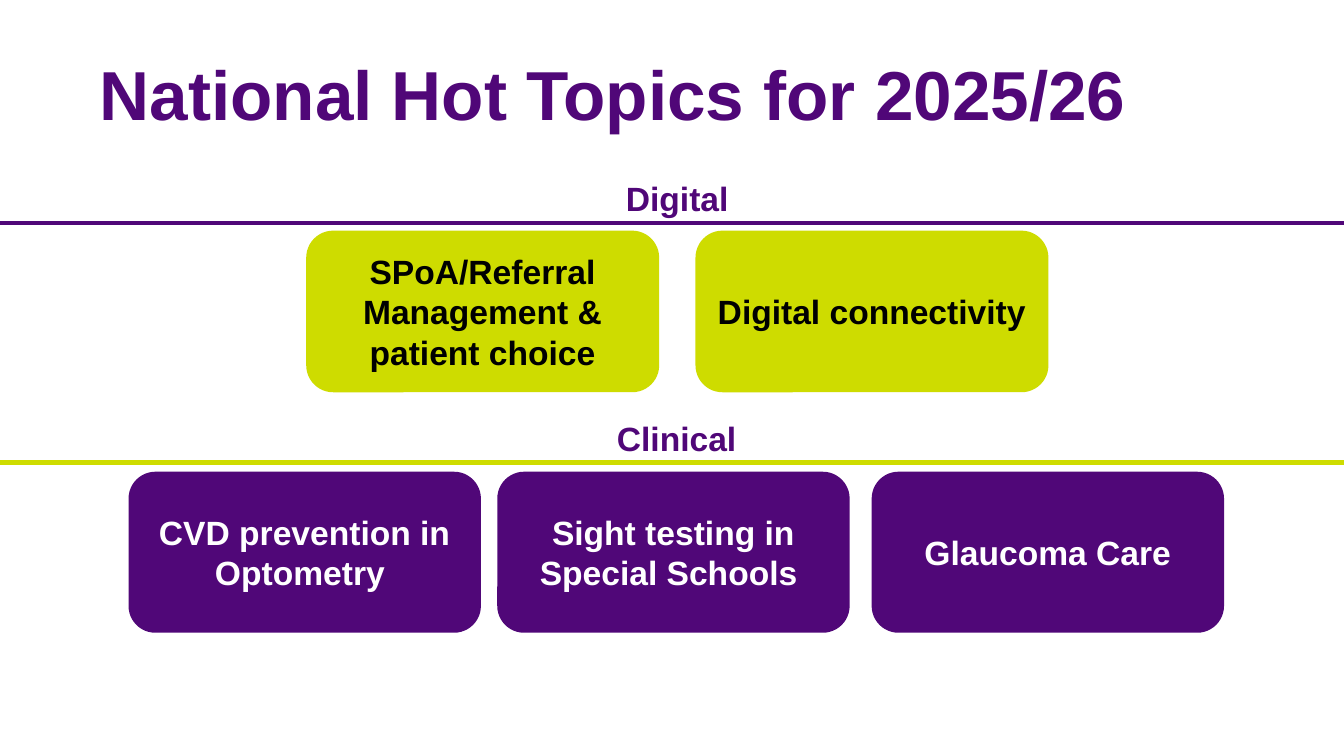
from dataclasses import dataclass

from lxml import etree
from pptx import Presentation
from pptx.dml.color import RGBColor
from pptx.enum import shapes, text
from pptx.oxml import ns
from pptx.slide import Slide
from pptx.text.text import TextFrame
from pptx.util import Cm, Pt


@dataclass(frozen=True)
class Theme:
    purple: RGBColor = RGBColor(0x50, 0x07, 0x78)
    lime: RGBColor = RGBColor(0xCE, 0xDC, 0x00)
    black: RGBColor = RGBColor(0x00, 0x00, 0x00)
    white: RGBColor = RGBColor(0xFF, 0xFF, 0xFF)
    font: str = "Arial"
    title_size: int = 66
    body_size: int = 32
    rule_width: float = 4.5


@dataclass(frozen=True)
class Topic:
    label: str
    left: float


@dataclass(frozen=True)
class Section:
    """A heading on a full-width rule with a row of topic cards; lengths in cm."""
    heading: str
    heading_left: float
    heading_width: float
    rule_top: float
    rule_color: RGBColor
    card_top: float
    card_width: float
    card_height: float
    card_fill: RGBColor
    card_text: RGBColor
    topics: tuple[Topic, ...]


THEME = Theme()
PAGE_WIDTH, PAGE_HEIGHT = 45.16, 25.4
HEADING_HEIGHT = 1.63

SECTIONS = (
    Section("Digital", 10.29, 24.94, 7.49, THEME.purple,
            7.75, 11.86, 5.43, THEME.lime, THEME.black,
            (Topic("SPoA/Referral Management & patient choice", 10.29),
             Topic("Digital connectivity", 23.37))),
    Section("Clinical", 4.34, 36.8, 15.54, THEME.lime,
            15.85, 11.84, 5.41, THEME.purple, THEME.white,
            (Topic("CVD prevention in Optometry ", 4.32),
             Topic("Sight testing in Special Schools ", 16.71),
             Topic("Glaucoma Care", 29.29))),
)


def write(frame: TextFrame, words: str, size: int, color: RGBColor,
          align: text.PP_ALIGN, anchor: text.MSO_ANCHOR) -> None:
    frame.word_wrap = True
    frame.vertical_anchor = anchor
    para = frame.paragraphs[0]
    para.alignment = align
    span = para.add_run()
    span.text = words
    span.font.name = THEME.font
    span.font.size = Pt(size)
    span.font.bold = True
    span.font.color.rgb = color


def add_title(page: Slide, words: str) -> None:
    box = page.shapes.add_textbox(Cm(3.1), Cm(0.99), Cm(36.4), Cm(4.6))
    write(box.text_frame, words, THEME.title_size, THEME.purple,
          text.PP_ALIGN.LEFT, text.MSO_ANCHOR.MIDDLE)
    box.text_frame.paragraphs[0].line_spacing = 0.9


def add_heading(page: Slide, section: Section) -> None:
    box = page.shapes.add_textbox(
        Cm(section.heading_left), Cm(section.rule_top - HEADING_HEIGHT),
        Cm(section.heading_width), Cm(HEADING_HEIGHT))
    write(box.text_frame, section.heading, THEME.body_size, THEME.purple,
          text.PP_ALIGN.CENTER, text.MSO_ANCHOR.TOP)
    box.text_frame.auto_size = text.MSO_AUTO_SIZE.SHAPE_TO_FIT_TEXT


def add_rule(page: Slide, section: Section) -> None:
    top = Cm(section.rule_top)
    rule = page.shapes.add_connector(
        shapes.MSO_CONNECTOR.STRAIGHT, Cm(0), top, Cm(PAGE_WIDTH), top)
    rule.line.color.rgb = section.rule_color
    rule.line.width = Pt(THEME.rule_width)
    etree.SubElement(rule._element.spPr, ns.qn("a:effectLst"))


def add_card(page: Slide, section: Section, topic: Topic) -> None:
    card = page.shapes.add_shape(
        shapes.MSO_SHAPE.ROUNDED_RECTANGLE, Cm(topic.left), Cm(section.card_top),
        Cm(section.card_width), Cm(section.card_height))
    card.shadow.inherit = False
    card.fill.solid()
    card.fill.fore_color.rgb = section.card_fill
    card.line.fill.background()
    write(card.text_frame, topic.label, THEME.body_size, section.card_text,
          text.PP_ALIGN.CENTER, text.MSO_ANCHOR.MIDDLE)


def main() -> None:
    deck = Presentation()
    deck.slide_width, deck.slide_height = Cm(PAGE_WIDTH), Cm(PAGE_HEIGHT)
    page = deck.slides.add_slide(deck.slide_layouts[6])
    add_title(page, "National Hot Topics for 2025/26")
    for section in SECTIONS:
        for topic in section.topics:
            add_card(page, section, topic)
        add_heading(page, section)
        add_rule(page, section)
    deck.save("out.pptx")


if __name__ == "__main__":
    main()
